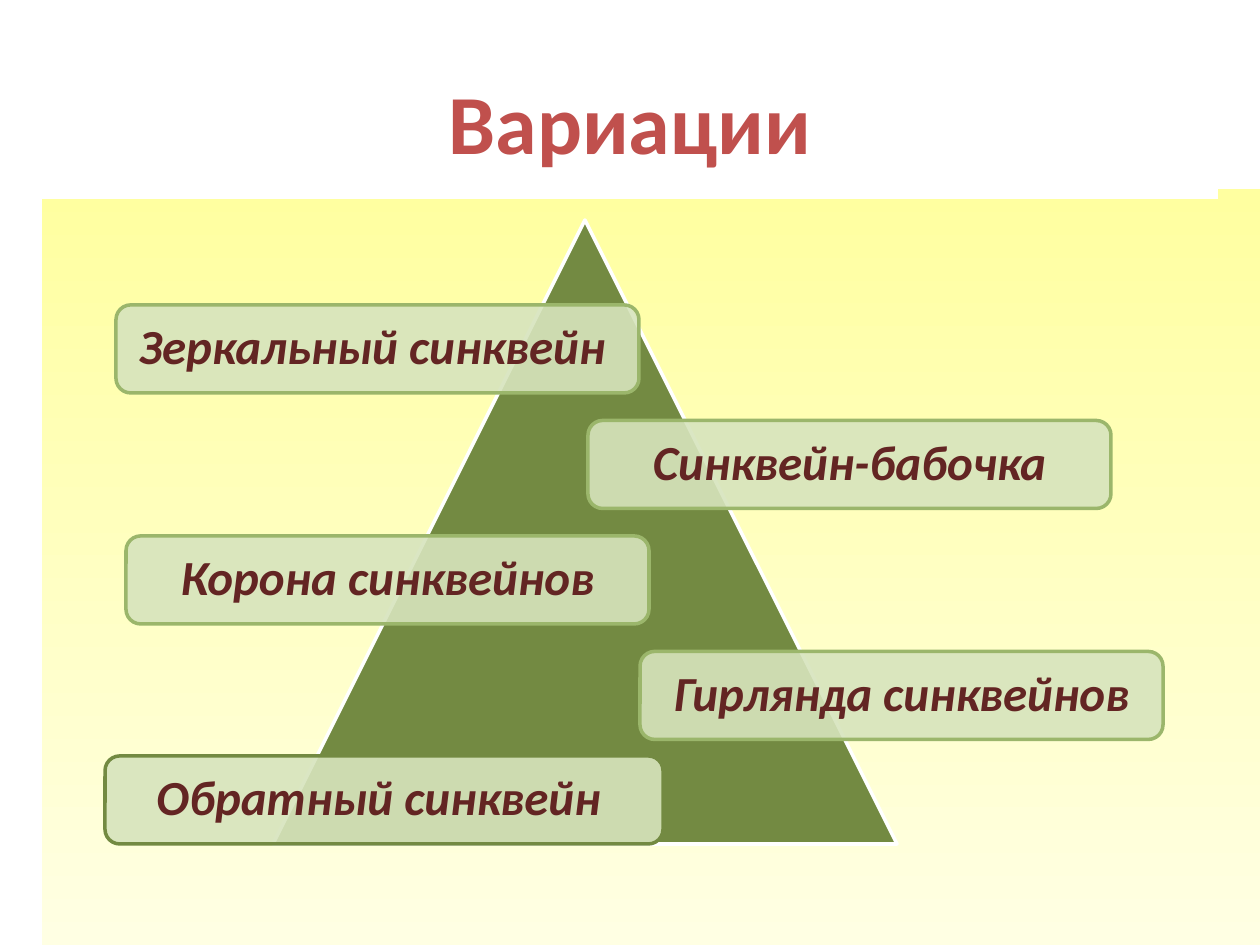
"""Build the slide of cinquain variations: a triangle with five labels."""
from lxml import etree
from pptx import Presentation
from pptx.dml.color import RGBColor
from pptx.enum.shapes import MSO_SHAPE
from pptx.enum.text import MSO_ANCHOR, PP_ALIGN
from pptx.oxml.ns import qn
from pptx.util import Emu, Pt

RECTANGLE = MSO_SHAPE.RECTANGLE
TRIANGLE = MSO_SHAPE.ISOSCELES_TRIANGLE
ROUNDED = MSO_SHAPE.ROUNDED_RECTANGLE
MIDDLE = MSO_ANCHOR.MIDDLE
CENTER = PP_ALIGN.CENTER
SCALE = 914400 / 126
COLORS = {
    "white": "FFFFFF",
    "yellow": "FFFFA0",
    "cream": "FFFFE3",
    "title": "C0504D",
    "olive": "738A42",
    "green": "9BB66B",
    "label": "D7E4BD",
    "text": "632523",
}


def px(*lengths):
    return [Emu(round(length * SCALE)) for length in lengths]


def write(shape, text, *, size, color, italic=False, spacing=1.0, insets=(0, 0, 0, 0)):
    frame = shape.text_frame
    frame.word_wrap = True
    frame.vertical_anchor = MIDDLE
    frame.margin_left, frame.margin_top, frame.margin_right, frame.margin_bottom = px(*insets)
    paragraph = frame.paragraphs[0]
    paragraph.alignment = CENTER
    paragraph.line_spacing = spacing
    run = paragraph.add_run()
    run.text = text
    run.font.name = "Calibri"
    run.font.size = Pt(size)
    run.font.bold = True
    run.font.italic = italic
    run.font.color.rgb = RGBColor.from_string(COLORS[color])


presentation = Presentation()
presentation.slide_width, presentation.slide_height = px(1260, 945)
slide = presentation.slides.add_slide(presentation.slide_layouts[5])

background = slide.shapes.add_shape(RECTANGLE, *px(42, 189, 1218, 756))
background.shadow.inherit = False
background.line.fill.background()
background.fill.gradient()
background.fill.gradient_angle = 270
for stop, color in zip(background.fill.gradient_stops, ("yellow", "cream")):
    stop.color.rgb = RGBColor.from_string(COLORS[color])

title = slide.shapes.title
title.left, title.top, title.width, title.height = px(42, 31, 1176, 168)
title.fill.solid()
title.fill.fore_color.rgb = RGBColor.from_string(COLORS["white"])
write(title, "Вариации", size=48, color="title", insets=(0, 12, 0, 0))
background.element.addnext(title.element)

triangle = slide.shapes.add_shape(TRIANGLE, *px(273, 220, 624, 624))
triangle.shadow.inherit = False
triangle.fill.solid()
triangle.fill.fore_color.rgb = RGBColor.from_string(COLORS["olive"])
triangle.line.color.rgb = RGBColor.from_string(COLORS["white"])
triangle.line.width = Pt(2)

label_top, label_step = 305, 115.5
labels = [
    ("Обратный синквейн ", 105, 756, 558, "olive"),
    ("Синквейн-бабочка", 588, label_top + label_step, 523, "green"),
    ("Корона синквейнов", 126, label_top + 2 * label_step, 523, "green"),
    ("Гирлянда синквейнов", 640, label_top + 3 * label_step, 523, "green"),
    ("Зеркальный синквейн ", 116, label_top, 523, "green"),
]
for text, left, top, width, outline in labels:
    label = slide.shapes.add_shape(ROUNDED, *px(left, top, width, 88))
    label.shadow.inherit = False
    label.fill.solid()
    label.fill.fore_color.rgb = RGBColor.from_string(COLORS["label"])
    fill_color = label.element.spPr.find(qn("a:solidFill")).find(qn("a:srgbClr"))
    etree.SubElement(fill_color, qn("a:alpha")).set("val", "90000")
    label.line.color.rgb = RGBColor.from_string(COLORS[outline])
    label.line.width = Pt(2)
    write(label, text, size=28, color="text", italic=True, spacing=0.9, insets=(15, 15, 15, 15))

presentation.save("out.pptx")
